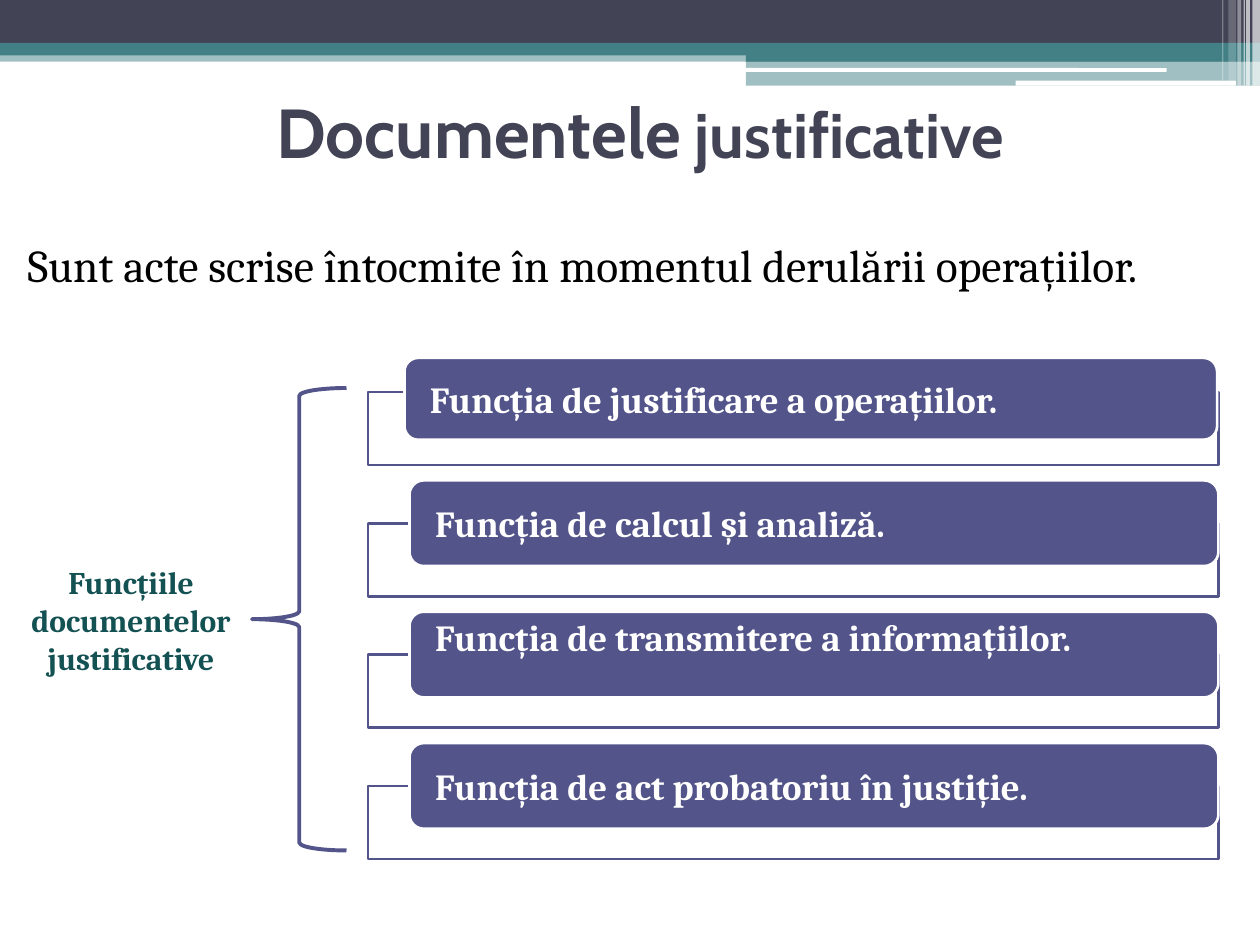
from collections import namedtuple

from lxml import etree
from pptx import Presentation
from pptx import util as u
from pptx.dml.color import RGBColor
from pptx.enum import shapes, text
from pptx.oxml import ns

NAVY = RGBColor(0x42, 0x44, 0x56)
TEAL = RGBColor(0x43, 0x80, 0x86)
DARK_TEAL = RGBColor(0x14, 0x51, 0x52)
VIOLET = RGBColor(0x53, 0x54, 0x8A)
WHITE = RGBColor(0xFF, 0xFF, 0xFF)
BLACK = RGBColor(0, 0, 0)
KIND = shapes.MSO_SHAPE

Box = namedtuple("Box", "left top width height")
PAGE = Box(0, 0, 10, 7.5)
FUNCTIONS = [
    "Funcția de justificare a operațiilor.",
    "Funcția de calcul și analiză.",
    "Funcția de transmitere a informațiilor.",
    "Funcția de act probatoriu în justiție.",
]


def inside(box, left, top, width, height):
    """Box given by an offset and size in inches relative to another box."""
    return Box(box.left + left, box.top + top, width, height)


def lengths(box):
    return [u.Inches(value) for value in box]


def place(shape, box):
    shape.left, shape.top, shape.width, shape.height = lengths(box)


def add_shape(page, kind, box, fill=None, opacity=100, line=None, weight=1.5):
    shape = page.shapes.add_shape(kind, *lengths(box))
    shape.shadow.inherit = False
    if fill is None:
        shape.fill.background()
    else:
        shape.fill.solid()
        shape.fill.fore_color.rgb = fill
        if opacity < 100:
            color = shape.fill._xPr.find(".//" + ns.qn("a:srgbClr"))
            etree.SubElement(color, ns.qn("a:alpha"), val=str(opacity * 1000))
    if line is None:
        shape.line.fill.background()
    else:
        shape.line.color.rgb = line
        shape.line.width = u.Pt(weight)
    return shape


def write(para, words, size, color, font="Cambria", bold=False, align=None):
    span = para.add_run()
    span.text = words
    span.font.name = font
    span.font.size = u.Pt(size)
    span.font.bold = bold
    span.font.color.rgb = color
    if align is not None:
        para.alignment = align


def draw_header(page, box):
    right = 0.592 * box.width
    wide = box.width - right
    bars = [
        (0, 0.4, box.width, 0.09, TEAL, 50),
        (0, 0, box.width, 0.34, NAVY, 100),
        (0, 0.34, box.width, 0.1, TEAL, 100),
        (right, 0.39, wide, 0.1, TEAL, 100),
        (right, 0.48, wide, 0.2, TEAL, 50),
    ]
    for *spot, color, opacity in bars:
        add_shape(page, KIND.RECTANGLE, inside(box, *spot), color, opacity)
    for spot in [(5.91, 0.54, 3.35, 0.03), (8.06, 0.64, 1.75, 0.04)]:
        add_shape(page, KIND.ROUNDED_RECTANGLE, inside(box, *spot), WHITE)
    stripes = [
        (9.94, 0.06, 0.68, 65), (9.89, 0.03, 0.68, 65), (9.87, 0.01, 0.68, 60),
        (9.82, 0.03, 0.68, 40), (9.75, 0.06, 0.64, 20), (9.7, 0.01, 0.64, 30),
    ]
    for left, width, height, opacity in stripes:
        stripe = inside(box, left, 0, width, height)
        add_shape(page, KIND.RECTANGLE, stripe, WHITE, opacity)


def fill_title(title, box):
    place(title, box)
    frame = title.text_frame
    frame.auto_size = text.MSO_AUTO_SIZE.NONE
    frame.vertical_anchor = text.MSO_ANCHOR.MIDDLE
    for words, size in [("Documentele", 39.6), (" justificative", 36)]:
        write(frame.paragraphs[0], words, size, NAVY, font="Cabin", bold=True,
              align=text.PP_ALIGN.CENTER)


def fill_definition(body, box):
    place(body, box)
    body.text_frame.auto_size = text.MSO_AUTO_SIZE.NONE
    para = body.text_frame.paragraphs[0]
    para.space_before = u.Pt(3)
    props = para._p.get_or_add_pPr()
    props.set("marL", str(u.Inches(0.4)))
    props.set("indent", str(u.Inches(-0.28)))
    etree.SubElement(props, ns.qn("a:buNone"))
    # The hanging indent also sets where the first line begins.
    write(para, "Sunt acte scrise întocmite în momentul derulării operațiilor.",
          26, BLACK)


def draw_function(page, box, words, label, raise_by=0):
    """A framed strip with the rounded label lying over its upper part."""
    frame = inside(box, 0, box.height - 0.58, box.width, 0.58)
    add_shape(page, KIND.RECTANGLE, frame, WHITE, 90, line=VIOLET)
    pill = add_shape(page, KIND.ROUNDED_RECTANGLE, label, VIOLET, line=WHITE)
    area = pill.text_frame
    area.word_wrap = True
    area.vertical_anchor = text.MSO_ANCHOR.MIDDLE
    area.margin_left = area.margin_right = u.Inches(0.17)
    area.margin_top = 0
    area.margin_bottom = u.Inches(2 * raise_by)
    write(area.paragraphs[0], words, 21, WHITE, bold=True,
          align=text.PP_ALIGN.LEFT)


def draw_functions(page, box):
    pitch = box.height / len(FUNCTIONS)
    for row, words in enumerate(FUNCTIONS):
        strip = inside(box, 0, row * pitch, box.width, 0.92)
        label = inside(strip, 0.33, 0, 6.42, 0.68)
        if row == 0:
            label = inside(strip, 0.29, 0.07, 6.45, 0.65)
        draw_function(page, strip, words, label, 0.14 if row == 2 else 0)


def draw_caption(page, box):
    caption = page.shapes.add_textbox(*lengths(box))
    caption.text_frame.word_wrap = True
    write(caption.text_frame.paragraphs[0],
          "Funcțiile documentelor justificative", 18, DARK_TEAL, bold=True,
          align=text.PP_ALIGN.CENTER)


def main():
    deck = Presentation()
    deck.slide_width, deck.slide_height = lengths(PAGE)[2:]
    page = deck.slides.add_slide(deck.slide_layouts[1])
    draw_header(page, PAGE)
    fill_title(page.shapes.title, inside(PAGE, 0.58, 0.58, 9, 0.92))
    fill_definition(page.placeholders[1], inside(PAGE, 0, 1.83, 10, 0.58))
    draw_functions(page, inside(PAGE, 2.92, 2.77, 6.75, 4.17))
    draw_caption(page, inside(PAGE, 0, 4.42, 2.08, 1.01))
    add_shape(page, KIND.LEFT_BRACE, inside(PAGE, 2, 3.08, 0.75, 3.67),
              line=VIOLET, weight=2.25)
    deck.save("out.pptx")


if __name__ == "__main__":
    main()
